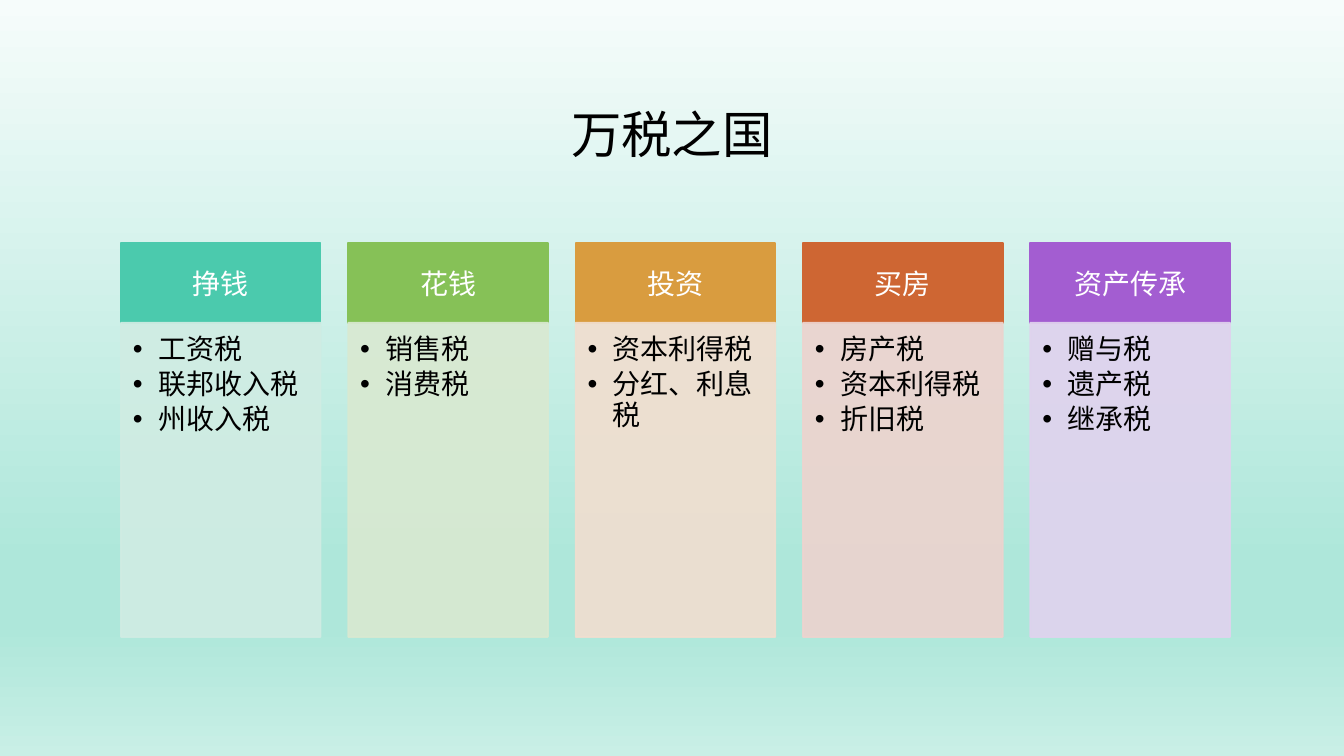
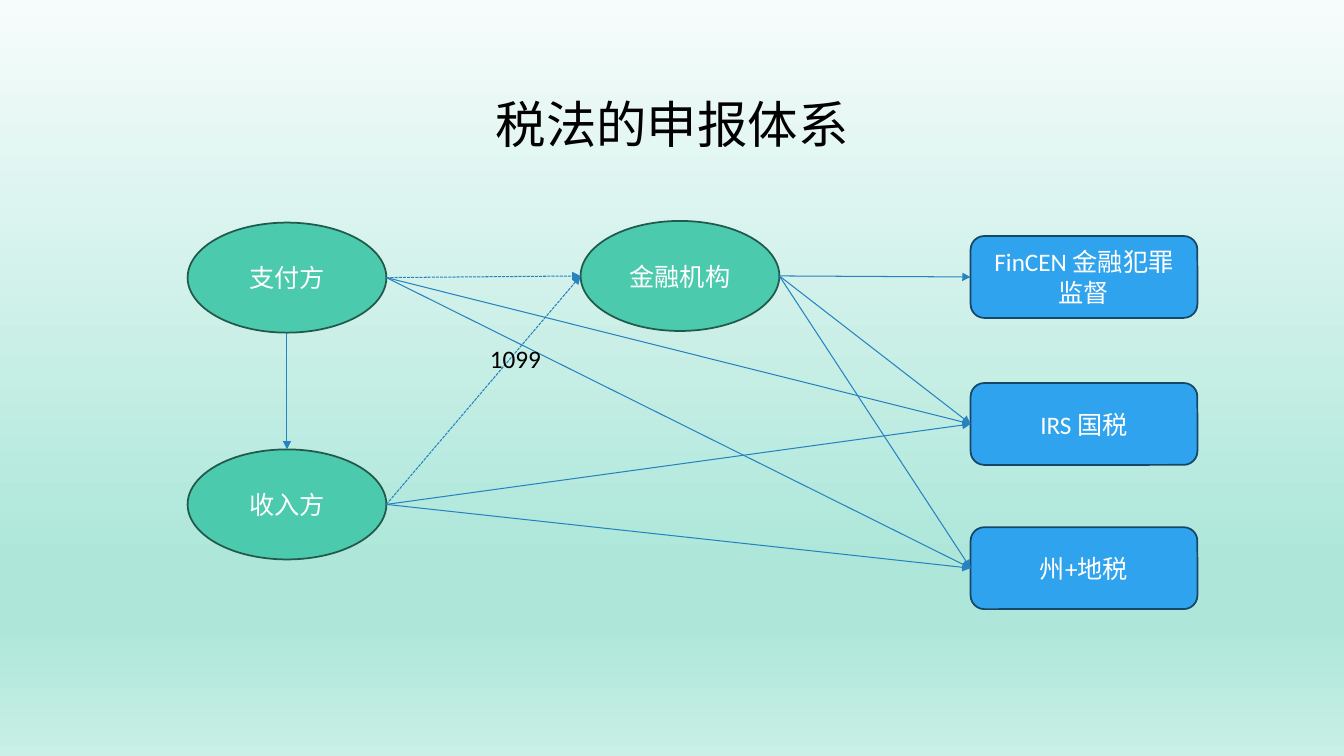
from dataclasses import dataclass

from lxml.etree import SubElement
from pptx import Presentation
from pptx.dml.color import RGBColor
from pptx.enum.dml import MSO_LINE
from pptx.enum.shapes import MSO_CONNECTOR, MSO_SHAPE
from pptx.enum.text import MSO_ANCHOR, MSO_AUTO_SIZE, PP_ALIGN
from pptx.oxml.ns import qn
from pptx.util import Pt


@dataclass(frozen=True)
class Theme:
    background: tuple = ((0, "F6FCFB"), (74, "AEE7DA"), (83, "AEE7DA"), (100, "C9EFE6"))
    dark: str = "000000"
    light: str = "FFFFFF"
    party: tuple = ("4BCAAD", "21594C")
    agency: tuple = ("2FA3EE", "154768")
    arrow: str = "2683BF"
    chinese_font: str = "Noto Sans CJK SC"
    latin_font: str = "Calibri"
    title_size: int = 36
    card_size: int = 20
    node_size: int = 18
    outline: float = 1.25
    arrow_width: float = 0.75
    card_opacity: int = 90


THEME = Theme()

TAXES_TITLE = "万税之国"
TAXES_TITLE_BOX = (84, 41, 792, 114.5)
TAX_CARDS = [
    ("挣钱", "4BCAAD", "D0ECE3", ["工资税", "联邦收入税", "州收入税"]),
    ("花钱", "86C157", "D9E9D1", ["销售税", "消费税"]),
    ("投资", "D99C3F", "F1DECF", ["资本利得税", "分红、利息税"]),
    ("买房", "CE6633", "EDD3CE", ["房产税", "资本利得税", "折旧税"]),
    ("资产传承", "A35DD1", "E0D2EE", ["赠与税", "遗产税", "继承税"]),
]
CARD_LEFT, CARD_TOP, CARD_WIDTH, CARD_PITCH = 86.4, 173.5, 142.6, 162.4
HEADER_HEIGHT, BODY_HEIGHT = 57, 224.5
HEADER_INSETS = (11.5, 6.5, 11.5, 6.5)
BODY_INSETS = (8.5, 8.5, 11.5, 12)

REPORTING_TITLE = "税法的申报体系"
REPORTING_TITLE_BOX = (72, 28, 816, 126)
PARTY_WIDTH, PARTY_HEIGHT = 142, 78.6
PARTIES = {
    "payer": ("支付方", 134, 159),
    "payee": ("收入方", 134, 321),
    "bank": ("金融机构", 414.7, 157.8),
}
AGENCY_LEFT, AGENCY_WIDTH, AGENCY_HEIGHT = 693.3, 162, 58.5
AGENCIES = {
    "fincen": ("FinCEN 金融犯罪监督", 168.6),
    "irs": ("IRS 国税", 273.6),
    "state": ("州+地税", 376.6),
}
REPORTS = [
    ("payer", "irs"), ("payer", "state"),
    ("payee", "irs"), ("payee", "state"),
    ("bank", "fincen"), ("bank", "irs"), ("bank", "state"),
]
FORM_LABEL = ("1099", (342.8, 242, 59.8, 28.8))


def color(value):
    return RGBColor.from_string(value)


def points(values):
    return [Pt(value) for value in values]


def set_background(master):
    fill = master.background.fill
    fill.gradient()
    fill.gradient_angle = 270
    stops = master._element.find(".//" + qn("p:bg")).find(".//" + qn("a:gsLst"))
    for stop in list(stops):
        stops.remove(stop)
    for position, value in THEME.background:
        stop = SubElement(stops, qn("a:gs"), pos=str(position * 1000))
        SubElement(stop, qn("a:srgbClr"), val=value)


def add_run(paragraph, text, size, ink, font_name):
    run = paragraph.add_run()
    run.text = text
    font = run.font
    font.size, font.name = Pt(size), font_name
    font.color.rgb = color(ink)
    SubElement(font._element, qn("a:ea"), typeface=font_name)


def set_insets(frame, insets):
    (frame.margin_left, frame.margin_top,
     frame.margin_right, frame.margin_bottom) = points(insets)


def add_centered_text(shape, text, size, ink, font_name):
    frame = shape.text_frame
    frame.word_wrap = True
    frame.vertical_anchor = MSO_ANCHOR.MIDDLE
    paragraph = frame.paragraphs[0]
    paragraph.alignment = PP_ALIGN.CENTER
    add_run(paragraph, text, size, ink, font_name)
    return paragraph


def add_title(slide, text, box):
    shape = slide.shapes.add_textbox(*points(box))
    paragraph = add_centered_text(shape, text, THEME.title_size, THEME.dark, THEME.chinese_font)
    paragraph.line_spacing = 0.9


def add_box(slide, kind, box, fill, line):
    shape = slide.shapes.add_shape(kind, *points(box))
    shape.shadow.inherit = False
    shape.fill.solid()
    shape.fill.fore_color.rgb = color(fill)
    shape.line.color.rgb = color(line)
    shape.line.width = Pt(THEME.outline)
    return shape


def make_translucent(shape):
    for value in shape._element.spPr.iter(qn("a:srgbClr")):
        SubElement(value, qn("a:alpha"), val=str(THEME.card_opacity * 1000))


def add_bullets(shape, items):
    frame = shape.text_frame
    frame.word_wrap = True
    frame.vertical_anchor = MSO_ANCHOR.TOP
    set_insets(frame, BODY_INSETS)
    for index, item in enumerate(items):
        paragraph = frame.add_paragraph() if index else frame.paragraphs[0]
        properties = paragraph._p.get_or_add_pPr()
        properties.set("marL", str(Pt(18)))
        properties.set("indent", str(Pt(-18)))
        SubElement(properties, qn("a:buFont"), typeface="Arial")
        SubElement(properties, qn("a:buChar"), char="•")
        paragraph.alignment = PP_ALIGN.LEFT
        paragraph.line_spacing = Pt(22)
        paragraph.space_after = Pt(3)
        add_run(paragraph, item, THEME.card_size, THEME.dark, THEME.chinese_font)


def add_card(slide, left, heading, strong, pale, items):
    header = add_box(slide, MSO_SHAPE.RECTANGLE,
                     (left, CARD_TOP, CARD_WIDTH, HEADER_HEIGHT), strong, strong)
    set_insets(header.text_frame, HEADER_INSETS)
    add_centered_text(header, heading, THEME.card_size, THEME.light, THEME.chinese_font)
    body = add_box(slide, MSO_SHAPE.RECTANGLE,
                   (left, CARD_TOP + HEADER_HEIGHT, CARD_WIDTH, BODY_HEIGHT), pale, pale)
    make_translucent(body)
    add_bullets(body, items)


def add_node(slide, kind, text, box, palette):
    shape = add_box(slide, kind, box, *palette)
    add_centered_text(shape, text, THEME.node_size, THEME.light, THEME.latin_font)
    return shape


def side_middle(shape, side):
    center = shape.left + shape.width // 2
    middle = shape.top + shape.height // 2
    return {
        "top": (center, shape.top),
        "bottom": (center, shape.top + shape.height),
        "left": (shape.left, middle),
        "right": (shape.left + shape.width, middle),
    }[side]


def add_arrow(slide, start, end, dashed=False):
    arrow = slide.shapes.add_connector(MSO_CONNECTOR.STRAIGHT, *start, *end)
    arrow.line.color.rgb = color(THEME.arrow)
    arrow.line.width = Pt(THEME.arrow_width)
    if dashed:
        arrow.line.dash_style = MSO_LINE.SQUARE_DOT
    SubElement(arrow.line._get_or_add_ln(), qn("a:tailEnd"), type="triangle")
    SubElement(arrow._element.spPr, qn("a:effectLst"))
    return arrow


def build_taxes(slide):
    add_title(slide, TAXES_TITLE, TAXES_TITLE_BOX)
    for index, card in enumerate(TAX_CARDS):
        add_card(slide, CARD_LEFT + index * CARD_PITCH, *card)


def build_reporting(slide):
    add_title(slide, REPORTING_TITLE, REPORTING_TITLE_BOX)
    parties = {
        name: add_node(slide, MSO_SHAPE.OVAL, text,
                       (left, top, PARTY_WIDTH, PARTY_HEIGHT), THEME.party)
        for name, (text, left, top) in PARTIES.items()
    }
    agencies = {
        name: add_node(slide, MSO_SHAPE.ROUNDED_RECTANGLE, text,
                       (AGENCY_LEFT, top, AGENCY_WIDTH, AGENCY_HEIGHT), THEME.agency)
        for name, (text, top) in AGENCIES.items()
    }
    for party, agency in REPORTS:
        target = agencies[agency]
        arrow = add_arrow(slide, side_middle(parties[party], "right"), side_middle(target, "left"))
        arrow.end_connect(target, 1)
    add_arrow(slide, side_middle(parties["payer"], "bottom"), side_middle(parties["payee"], "top"))
    for party in ("payer", "payee"):
        add_arrow(slide, side_middle(parties[party], "right"),
                  side_middle(parties["bank"], "left"), dashed=True)

    text, box = FORM_LABEL
    label = slide.shapes.add_textbox(*points(box))
    label.text_frame.word_wrap = False
    label.text_frame.auto_size = MSO_AUTO_SIZE.SHAPE_TO_FIT_TEXT
    add_run(label.text_frame.paragraphs[0], text, THEME.node_size, THEME.dark, THEME.latin_font)


def main():
    presentation = Presentation()
    presentation.slide_width, presentation.slide_height = Pt(960), Pt(540)
    set_background(presentation.slide_master)
    blank_layout = presentation.slide_layouts[6]
    for build in (build_taxes, build_reporting):
        build(presentation.slides.add_slide(blank_layout))
    presentation.save("out.pptx")


if __name__ == "__main__":
    main()
